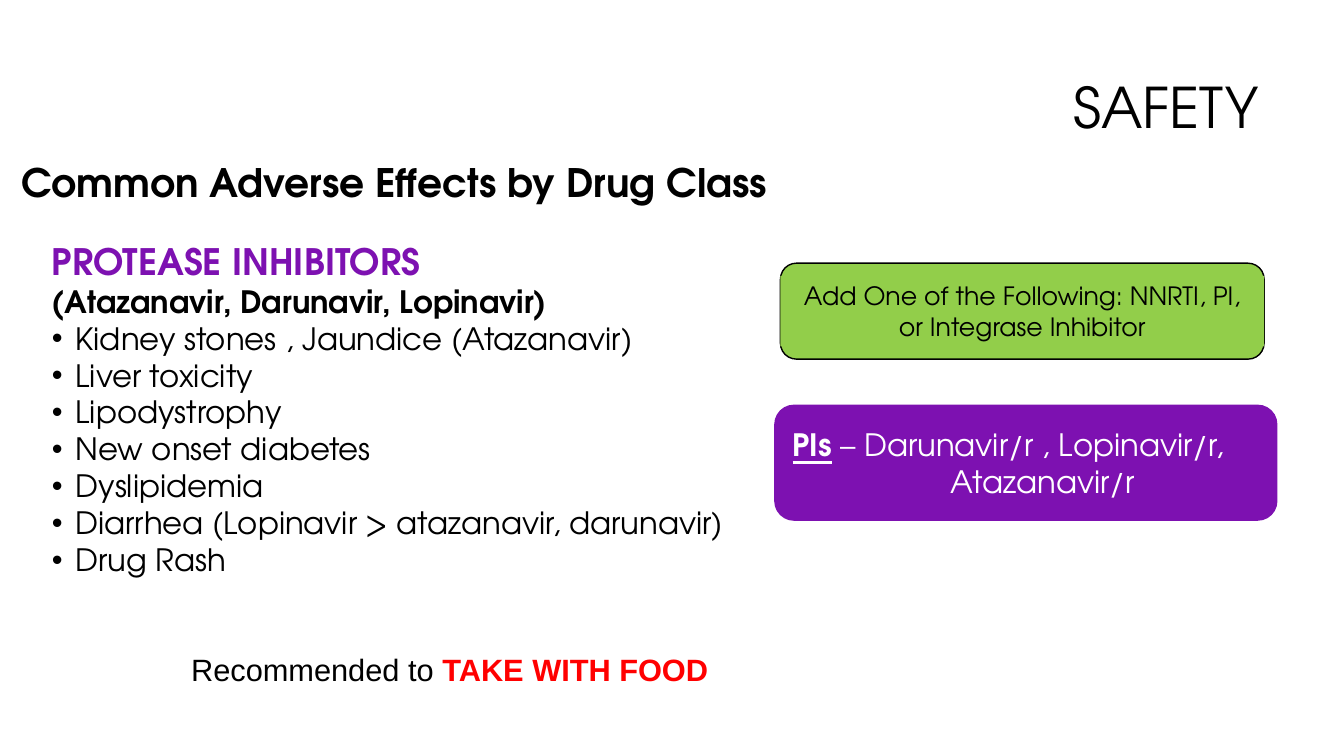
from lxml import etree
from pptx import Presentation
from pptx.dml.color import RGBColor
from pptx.enum.shapes import MSO_SHAPE as SHAPE
from pptx.enum.text import MSO_ANCHOR as ANCHOR, MSO_AUTO_SIZE as AUTO, PP_ALIGN as ALIGN
from pptx.oxml.ns import qn
from pptx.util import Pt

ADVENTOR = "TeX Gyre Adventor"
BLACK, WHITE, RED = "000000", "FFFFFF", "FF0000"
PURPLE, GREEN = "7D11B1", "92CE4A"
EFFECTS = [
    "Kidney stones , Jaundice (Atazanavir)",
    "Liver toxicity",
    "Lipodystrophy",
    "New onset diabetes",
    "Dyslipidemia",
    "Diarrhea (Lopinavir > atazanavir, darunavir)",
    "Drug Rash",
]


def rgb(color):
    return RGBColor.from_string(color)


def write(p, text, size=22, color=BLACK, font=ADVENTOR, bold=False, underline=False):
    r = p.add_run()
    r.text = text
    r.font.size, r.font.name = Pt(size), font
    r.font.bold, r.font.underline = bold, underline
    r.font.color.rgb = rgb(color)


def indent(p, left, first=0):
    pPr = p._p.get_or_add_pPr()
    pPr.set("marL", str(Pt(left)))
    pPr.set("indent", str(Pt(first)))
    return pPr


def add_bullet(p, gap=17):
    pPr = indent(p, gap, -gap)
    etree.SubElement(pPr, qn("a:buFont")).set("typeface", "Arial")
    etree.SubElement(pPr, qn("a:buChar")).set("char", "•")


def text_box(slide, x, y, w, h):
    tf = slide.shapes.add_textbox(Pt(x), Pt(y), Pt(w), Pt(h)).text_frame
    tf.word_wrap = True
    return tf


def panel(slide, kind, x, y, w, h, fill, line=None):
    """Add a filled shape, outlined if a line colour is given; return its text frame."""
    sp = slide.shapes.add_shape(kind, Pt(x), Pt(y), Pt(w), Pt(h))
    sp.shadow.inherit = False
    sp.fill.solid()
    sp.fill.fore_color.rgb = rgb(fill)
    if line:
        sp.line.color.rgb = rgb(line)
        sp.line.width = Pt(1)
    else:
        sp.line.fill.background()
    sp.text_frame.word_wrap = True
    return sp.text_frame


def title(slide, x, y, w, h):
    sp = slide.shapes.title
    sp.left, sp.top, sp.width, sp.height = Pt(x), Pt(y), Pt(w), Pt(h)
    tf = sp.text_frame
    tf.auto_size, tf.vertical_anchor = AUTO.NONE, ANCHOR.MIDDLE
    p = tf.paragraphs[0]
    p.alignment, p.line_spacing = ALIGN.RIGHT, 0.9
    write(p, "SAFETY", size=40)


def subtitle(slide, x, y, w, h):
    p = text_box(slide, x, y, w, h).paragraphs[0]
    write(p, "Common Adverse Effects by Drug Class", size=28, bold=True)


def adverse_effects(slide, x, y, w, h):
    tf = text_box(slide, x, y, w, h)
    write(tf.paragraphs[0], "PROTEASE INHIBITORS", size=26, color=PURPLE, bold=True)
    write(tf.add_paragraph(), "(Atazanavir, Darunavir, Lopinavir)", bold=True)
    for effect in EFFECTS:
        p = tf.add_paragraph()
        add_bullet(p)
        write(p, effect)


def add_one_panel(slide, x, y, w, h):
    """Place the outlined panel and, inside it, the label band that spans its width."""
    panel(slide, SHAPE.ROUNDED_RECTANGLE, x, y, w, h, GREEN, BLACK)
    inset = 9
    tf = panel(slide, SHAPE.RECTANGLE, x, y + inset, w, h - 2 * inset, GREEN)
    tf.vertical_anchor = ANCHOR.TOP
    p = tf.paragraphs[0]
    p.alignment = ALIGN.CENTER
    write(p, "Add One of the Following: NNRTI, PI, or Integrase Inhibitor", size=18)


def inhibitor_panel(slide, x, y, w, h):
    tf = panel(slide, SHAPE.ROUNDED_RECTANGLE, x, y, w, h, PURPLE, PURPLE)
    tf.vertical_anchor = ANCHOR.MIDDLE
    p = tf.paragraphs[0]
    p.alignment = ALIGN.LEFT
    indent(p, 1.5)
    write(p, "PIs", color=WHITE, bold=True, underline=True)
    write(p, " – Darunavir/r , Lopinavir/r,", color=WHITE)
    p = tf.add_paragraph()
    p.alignment = ALIGN.CENTER
    indent(p, 24)
    write(p, "Atazanavir/r", color=WHITE)


def food_note(slide, x, y, w, h):
    p = text_box(slide, x, y, w, h).paragraphs[0]
    write(p, "Recommended to ", font="Arial")
    write(p, "TAKE WITH FOOD", font="Arial", color=RED, bold=True)


def main():
    prs = Presentation()
    prs.slide_width, prs.slide_height = Pt(960), Pt(540)
    s = prs.slides.add_slide(prs.slide_layouts[5])
    title(s, 228, 28, 678.5, 101.5)
    subtitle(s, 8, 109.5, 605.5, 85)
    adverse_effects(s, 30, 167, 507, 299.5)
    add_one_panel(s, 557.5, 188, 345.5, 68.5)
    inhibitor_panel(s, 553.5, 289.5, 358.5, 82)
    food_note(s, 129.5, 461.5, 590.5, 34)
    prs.save("out.pptx")


if __name__ == "__main__":
    main()
